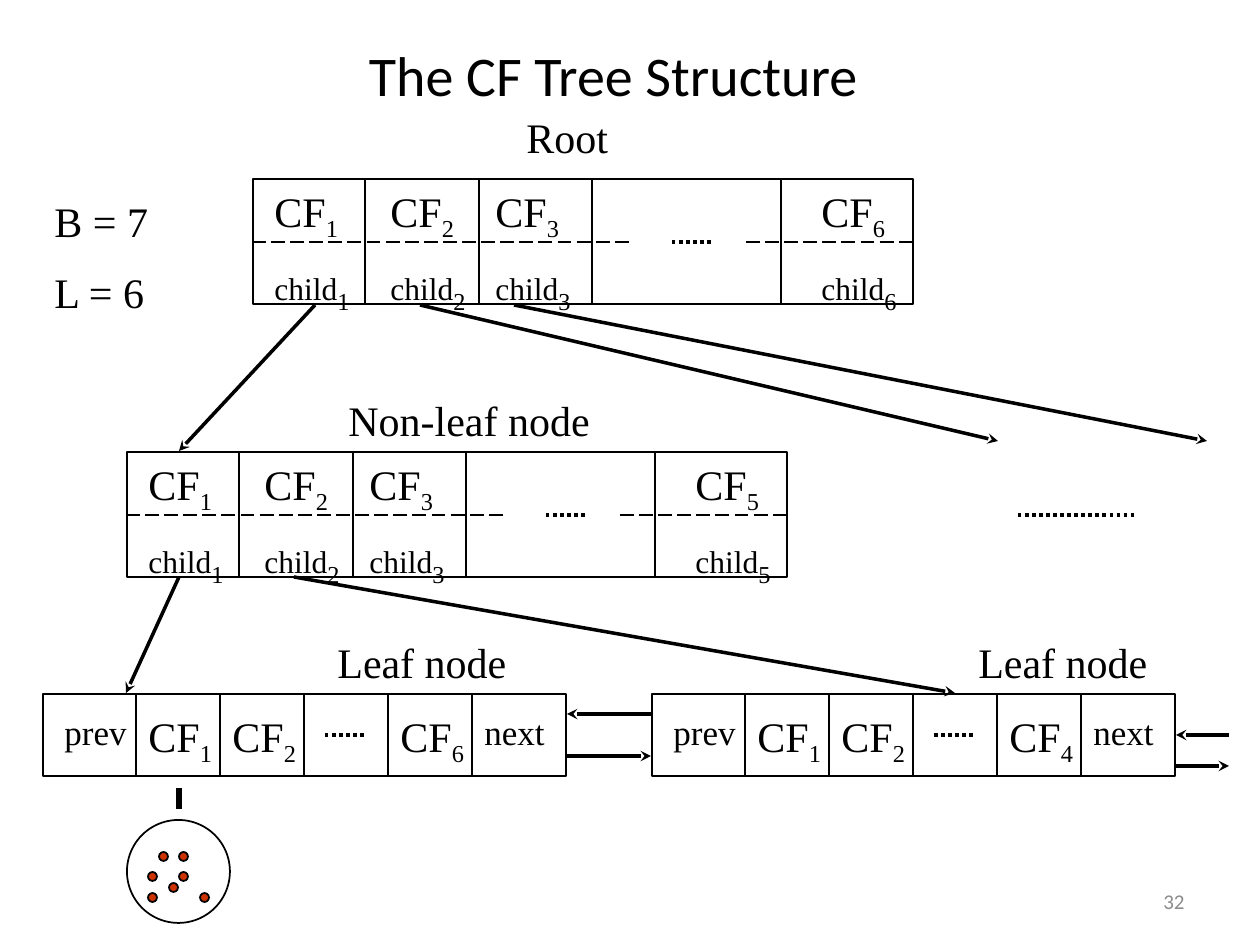
import dataclasses
import typing

import lxml.etree
import pptx
import pptx.dml.color
import pptx.enum.dml
import pptx.enum.shapes
import pptx.enum.text
import pptx.oxml.ns
import pptx.util

SCALE = 914400 / 126
COLORS = {"ink": "000000", "point": "CC3300", "number": "8C8C8C"}
SERIF = "Times New Roman"
SANS = "Calibri"
ALIGN = pptx.enum.text.PP_ALIGN
ANCHOR = pptx.enum.text.MSO_ANCHOR
SHAPE = pptx.enum.shapes.MSO_SHAPE
DASH = pptx.enum.dml.MSO_LINE


@dataclasses.dataclass(frozen=True)
class Box:
    x: int
    y: int
    w: int
    h: int


@dataclasses.dataclass(frozen=True)
class Line:
    x1: int
    y1: int
    x2: int
    y2: int
    width: int = 1
    dash: typing.Any = None
    arrow: bool = False


@dataclasses.dataclass(frozen=True)
class Node:
    x: int
    y: int
    last: str


@dataclasses.dataclass(frozen=True)
class Label:
    text: str
    box: Box


def px(value: int) -> int:
    return round(value * SCALE)


def place(box: Box) -> typing.List[int]:
    return [px(value) for value in dataclasses.astuple(box)]


def color(name: str) -> pptx.dml.color.RGBColor:
    return pptx.dml.color.RGBColor.from_string(COLORS[name])


def style(font, size: int, face: str = SERIF, tint: str = "ink") -> None:
    font.size = pptx.util.Pt(size)
    font.name = face
    font.color.rgb = color(tint)


def space(para) -> None:
    gap = lxml.etree.SubElement(
        para._p.get_or_add_pPr(), pptx.oxml.ns.qn("a:spcBef"))
    lxml.etree.SubElement(gap, pptx.oxml.ns.qn("a:spcPct"), val="50000")


def write(slide, text: str, box: Box, size: int = 24, sub: str = "") -> None:
    frame = slide.shapes.add_textbox(*place(box)).text_frame
    frame.word_wrap = True
    frame.auto_size = pptx.enum.text.MSO_AUTO_SIZE.SHAPE_TO_FIT_TEXT
    frame.text = text
    for para in frame.paragraphs:
        space(para)
        for run in para.runs:
            style(run.font, size)
    if sub:
        run = frame.paragraphs[0].add_run()
        run.text = sub
        style(run.font, 24)
        run._r.get_or_add_rPr().set("baseline", "-25000")


def draw(slide, line: Line) -> None:
    shape = slide.shapes.add_connector(
        pptx.enum.shapes.MSO_CONNECTOR.STRAIGHT,
        px(line.x1), px(line.y1), px(line.x2), px(line.y2))
    shape.line.color.rgb = color("ink")
    shape.line.width = pptx.util.Pt(line.width)
    if line.dash:
        shape.line.dash_style = line.dash
    if line.arrow:
        lxml.etree.SubElement(
            shape.line._get_or_add_ln(), pptx.oxml.ns.qn("a:tailEnd"), type="stealth")
    lxml.etree.SubElement(shape._element.spPr, pptx.oxml.ns.qn("a:effectLst"))


def outline(slide, kind, box: Box, fill: str = "") -> None:
    shape = slide.shapes.add_shape(kind, *place(box))
    shape.shadow.inherit = False
    if fill:
        shape.fill.solid()
        shape.fill.fore_color.rgb = color(fill)
    else:
        shape.fill.background()
    shape.line.color.rgb = color("ink")
    shape.line.width = pptx.util.Pt(1)


def dots(slide, x: int, y: int, size: int = 42) -> None:
    draw(slide, Line(x, y, x + size, y, 2, DASH.ROUND_DOT))


def branch(slide, node: Node) -> None:
    x, y = node.x, node.y
    outline(slide, SHAPE.RECTANGLE, Box(x + 1, y, 660, 125))
    for step in (113, 227, 340, 529):
        draw(slide, Line(x + step, y, x + step, y + 126))
    for start, end in ((0, 378), (494, 661)):
        draw(slide, Line(x + start, y + 63, x + end, y + 63, 1, DASH.LONG_DASH))
    for step, sub in zip((10, 126, 231, 557), ("1", "2", "3", node.last)):
        write(slide, "CF", Box(x + step, y, 95, 63), 24, sub)
        write(slide, "child", Box(x + step, y + 73, 126, 50), 18, sub)
    dots(slide, x + 420, y + 63)


def leaf(slide, node: Node) -> None:
    x, y = node.x, node.y
    outline(slide, SHAPE.RECTANGLE, Box(x + 1, y + 1, 523, 82))
    for index in range(5):
        step = x + 94 + 84 * index
        draw(slide, Line(step, y, step, y + 84))
    for index, sub in ((0, "1"), (1, "2"), (3, node.last)):
        write(slide, "CF", Box(x + 94 + 84 * index, y + 11, 95, 63), 24, sub)
    dots(slide, x + 283, y + 42)
    write(slide, "prev", Box(x + 10, y + 11, 95, 54), 20)
    write(slide, "next", Box(x + 430, y + 11, 95, 54), 20)


BRANCHES = (Node(252, 179, "6"), Node(126, 452, "5"))
LEAVES = (Node(42, 693, "6"), Node(651, 693, "4"))
LABELS = (
    Label("B = 7\nL = 6", Box(42, 189, 147, 139)),
    Label("Root", Box(514, 105, 136, 63)),
    Label("Non-leaf node", Box(336, 388, 273, 63)),
    Label("Leaf node", Box(325, 630, 199, 63)),
    Label("Leaf node", Box(966, 630, 199, 63)),
)
ARROWS = (
    (315, 305, 179, 451), (420, 305, 998, 441), (514, 305, 1207, 441),
    (179, 577, 126, 693), (294, 577, 955, 693),
    (651, 714, 567, 714), (567, 756, 651, 756),
    (1176, 766, 1229, 766), (1229, 735, 1176, 735),
)
POINTS = ((159, 852), (179, 872), (179, 852), (148, 893), (148, 872), (169, 883), (200, 893))


def main() -> None:
    deck = pptx.Presentation()
    deck.slide_width, deck.slide_height = px(1260), px(945)
    slide = deck.slides.add_slide(deck.slide_layouts[5])

    title = slide.shapes.title
    title.left, title.top, title.width, title.height = place(Box(93, 32, 1041, 84))
    title.text_frame.text = "The CF Tree Structure"
    title.text_frame.vertical_anchor = ANCHOR.MIDDLE
    para = title.text_frame.paragraphs[0]
    para.alignment = ALIGN.CENTER
    style(para.runs[0].font, 32, SANS)

    frame = slide.shapes.add_textbox(*place(Box(903, 876, 294, 50))).text_frame
    frame.word_wrap = True
    frame.text = "32"
    frame.vertical_anchor = ANCHOR.MIDDLE
    frame.paragraphs[0].alignment = ALIGN.RIGHT
    style(frame.paragraphs[0].runs[0].font, 12, SANS, "number")

    for node in BRANCHES:
        branch(slide, node)
    for node in LEAVES:
        leaf(slide, node)
    for ends in ARROWS:
        draw(slide, Line(*ends, width=2, arrow=True))
    dots(slide, 1018, 515, 116)
    for label in LABELS:
        write(slide, label.text, label.box)
    for x, y in POINTS:
        outline(slide, SHAPE.OVAL, Box(x, y, 9, 9), "point")
    outline(slide, SHAPE.OVAL, Box(127, 820, 103, 103))
    draw(slide, Line(179, 788, 179, 809, 3))
    deck.save("out.pptx")


if __name__ == "__main__":
    main()
